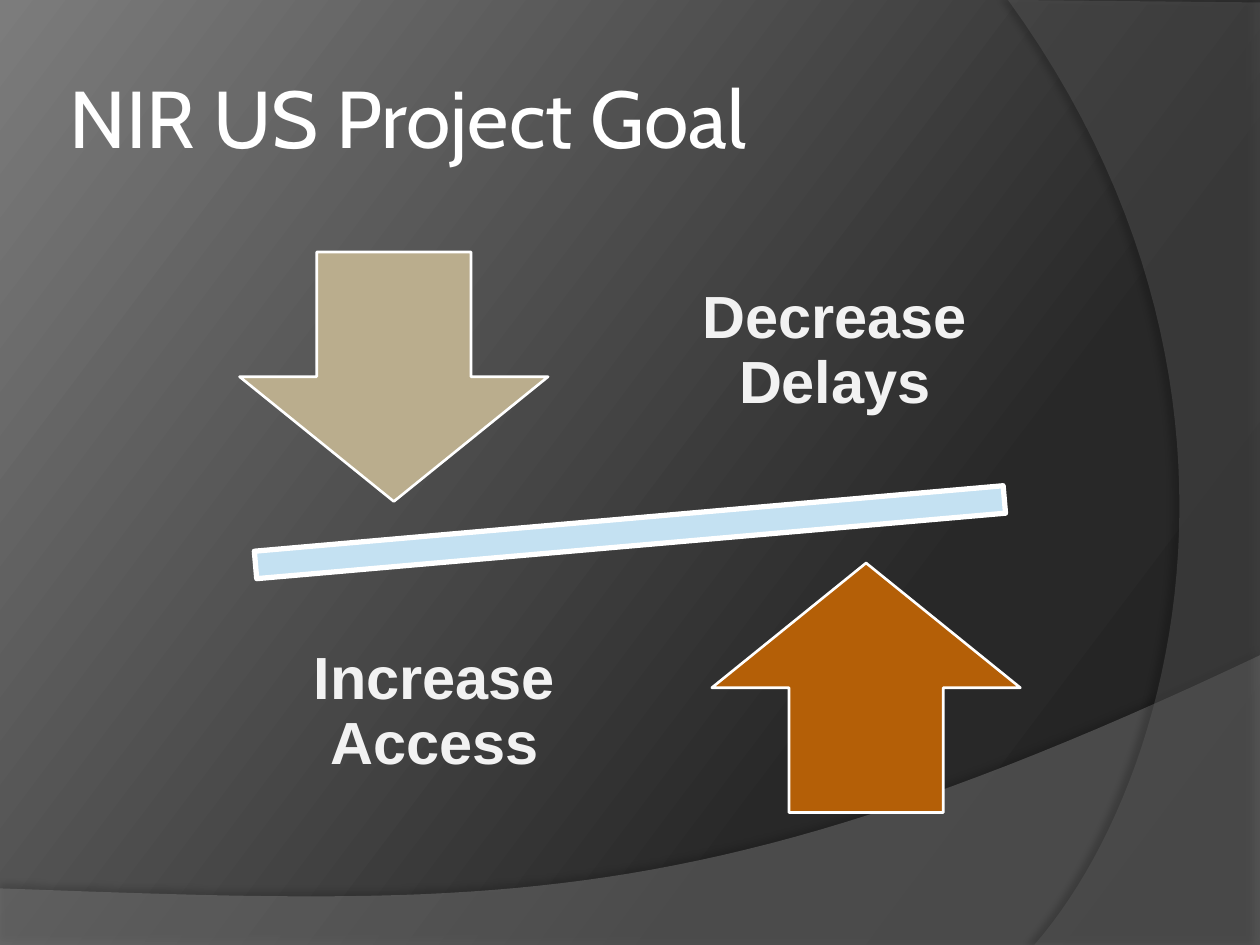
from lxml.etree import SubElement
from pptx import Presentation
from pptx.dml.color import RGBColor
from pptx.enum.shapes import MSO_SHAPE
from pptx.enum.text import MSO_ANCHOR, PP_ALIGN
from pptx.oxml.ns import qn
from pptx.util import Cm, Pt

WHITE = "FFFFFF"


def rgb(value):
    return RGBColor.from_string(value)


def add_color(parent, color, alpha=100):
    clr = SubElement(parent, qn("a:srgbClr"), val=color)
    SubElement(clr, qn("a:alpha"), val=str(alpha * 1000))


def bezier(p0, p1, p2, p3, steps=48):
    points = []
    for i in range(1, steps + 1):
        t = i / steps
        weights = ((1 - t) ** 3, 3 * t * (1 - t) ** 2, 3 * t * t * (1 - t), t ** 3)
        points.append(tuple(sum(w * c for w, c in zip(weights, axis))
                            for axis in zip(p0, p1, p2, p3)))
    return points


class Deck:
    """Holds the presentation style and the current slide."""

    title_font, body_font = "Cabin", "Arial"

    def __init__(self, width, height):
        self.prs = Presentation()
        self.prs.slide_width, self.prs.slide_height = Cm(width), Cm(height)
        self.slide = self.prs.slides.add_slide(self.prs.slide_layouts[5])

    def background(self, stops, angle):
        fill = self.slide.background.fill
        fill.gradient()
        fill.gradient_angle = 360 - angle
        gs_list = self.slide.element.find(".//" + qn("a:gsLst"))
        for gs in list(gs_list):
            gs_list.remove(gs)
        for pos, color in stops:
            add_color(SubElement(gs_list, qn("a:gs"), pos=str(pos * 1000)), color)

    def wave(self, corners, controls, color, alpha, shadow_alpha, distance, direction):
        points = corners + bezier(corners[-1], *controls)
        emu = [(Cm(x), Cm(y)) for x, y in points]
        builder = self.slide.shapes.build_freeform(*emu[0])
        builder.add_line_segments(emu[1:])
        sp = builder.convert_to_shape()
        sp.line.fill.background()
        sp.fill.solid()
        sp.fill.fore_color.rgb = rgb(color)
        clr = sp.element.spPr.find(qn("a:solidFill"))[0]
        SubElement(clr, qn("a:alpha"), val=str(alpha * 1000))
        sp.shadow.inherit = False
        effects = sp.element.spPr.find(qn("a:effectLst"))
        shadow = SubElement(effects, qn("a:outerShdw"), blurRad=str(Pt(4)),
                            dist=str(Pt(distance)), dir=str(direction * 60000),
                            algn="ctr", rotWithShape="0")
        add_color(shadow, "000000", shadow_alpha)

    def shape(self, kind, box, color, line_width, rotation=0):
        sp = self.slide.shapes.add_shape(kind, *map(Cm, box))
        sp.shadow.inherit = False
        sp.rotation = rotation
        sp.fill.solid()
        sp.fill.fore_color.rgb = rgb(color)
        sp.line.color.rgb = rgb(WHITE)
        sp.line.width = Pt(line_width)

    def set_text(self, sp, text, inset, font, size, color, align, bold=False):
        tf = sp.text_frame
        tf.word_wrap = True
        tf.vertical_anchor = MSO_ANCHOR.MIDDLE
        tf.margin_left = tf.margin_right = tf.margin_top = tf.margin_bottom = Cm(inset)
        p = tf.paragraphs[0]
        p.alignment = align
        r = p.add_run()
        r.text = text
        r.font.name, r.font.size, r.font.bold = font, Pt(size), bold
        r.font.color.rgb = rgb(color)
        return p

    def title(self, text, box):
        sp = self.slide.shapes.title
        sp.left, sp.top, sp.width, sp.height = map(Cm, box)
        self.set_text(sp, text, 0.13, self.title_font, 46, WHITE, PP_ALIGN.LEFT)

    def label(self, text, box):
        sp = self.slide.shapes.add_textbox(*map(Cm, box))
        p = self.set_text(sp, text, 0.66, self.body_font, 34, "F2F2F2", PP_ALIGN.CENTER, True)
        p.line_spacing = 0.9


def main():
    deck = Deck(25.4, 19.05)
    deck.background([(0, "222222"), (30, "282828"), (100, "7C7C7C")], 217)
    deck.wave([(0, 17.91), (0, 19.08), (25.4, 19.08), (25.4, 13.21)],
              [(14.2, 18.52), (9.93, 18.26), (0, 17.91)],
              "7F7F7F", 45, 35, 3.5, 270)
    deck.wave([(25.4, 0.05), (25.4, 19.05), (20.85, 19.05)],
              [(23.75, 15.72), (25.86, 7.62), (20.32, 0)],
              "5E5E5E", 40, 45, 4, 180)
    deck.title("NIR US Project Goal", (1.27, 0.76, 20.75, 3.18))
    deck.shape(MSO_SHAPE.MATH_MINUS, (2.39, 9.55, 20.62, 2.36), "C4E1F2", 3, 355)
    deck.shape(MSO_SHAPE.DOWN_ARROW, (4.83, 5.08, 6.22, 5.03), "BAAD8D", 1.5)
    deck.label("Decrease Delays", (13.34, 4.45, 6.98, 5.28))
    deck.shape(MSO_SHAPE.UP_ARROW, (14.35, 11.35, 6.22, 5.03), "B45F07", 1.5)
    deck.label("Increase Access", (5.44, 11.73, 6.63, 5.28))
    deck.prs.save("out.pptx")


if __name__ == "__main__":
    main()
